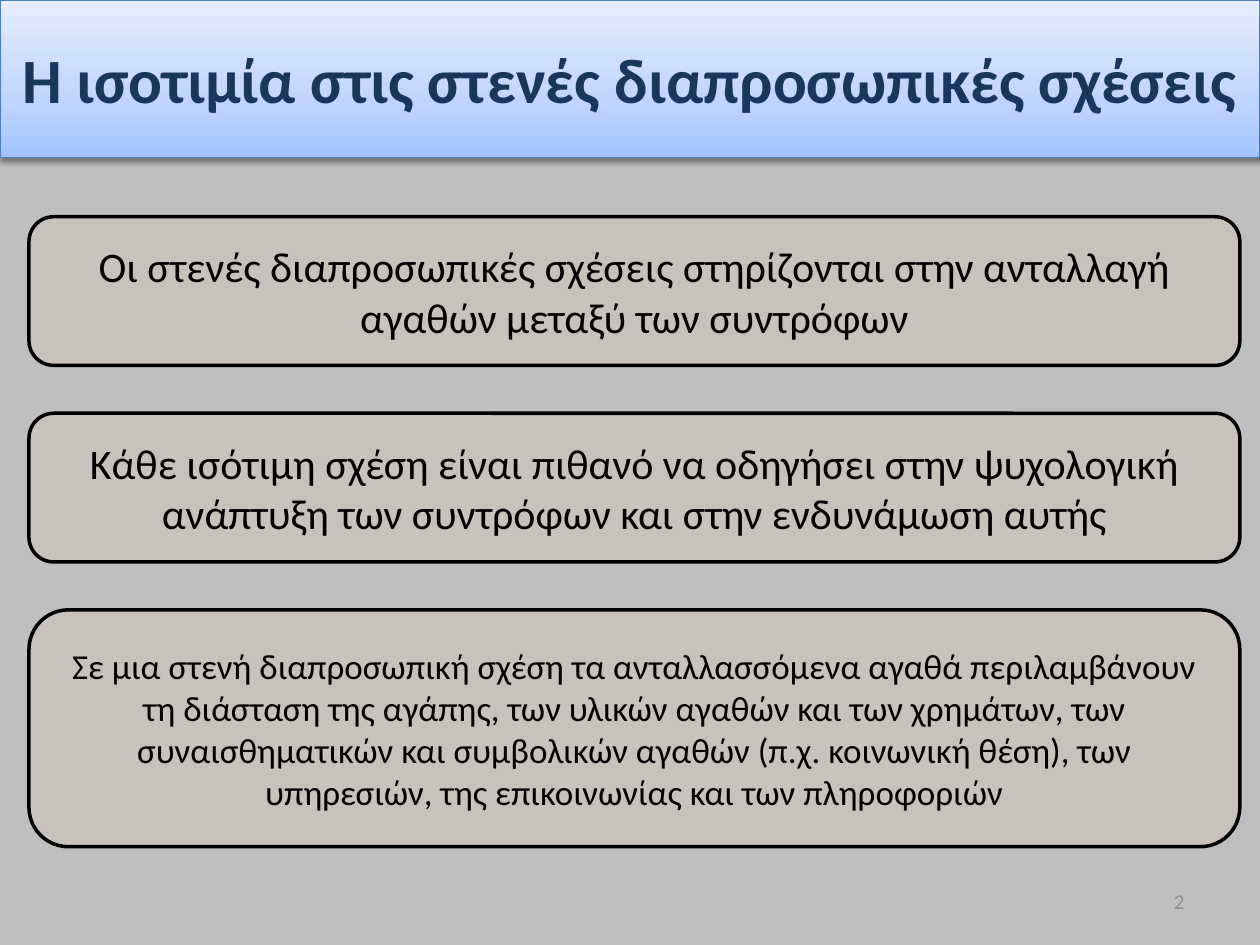
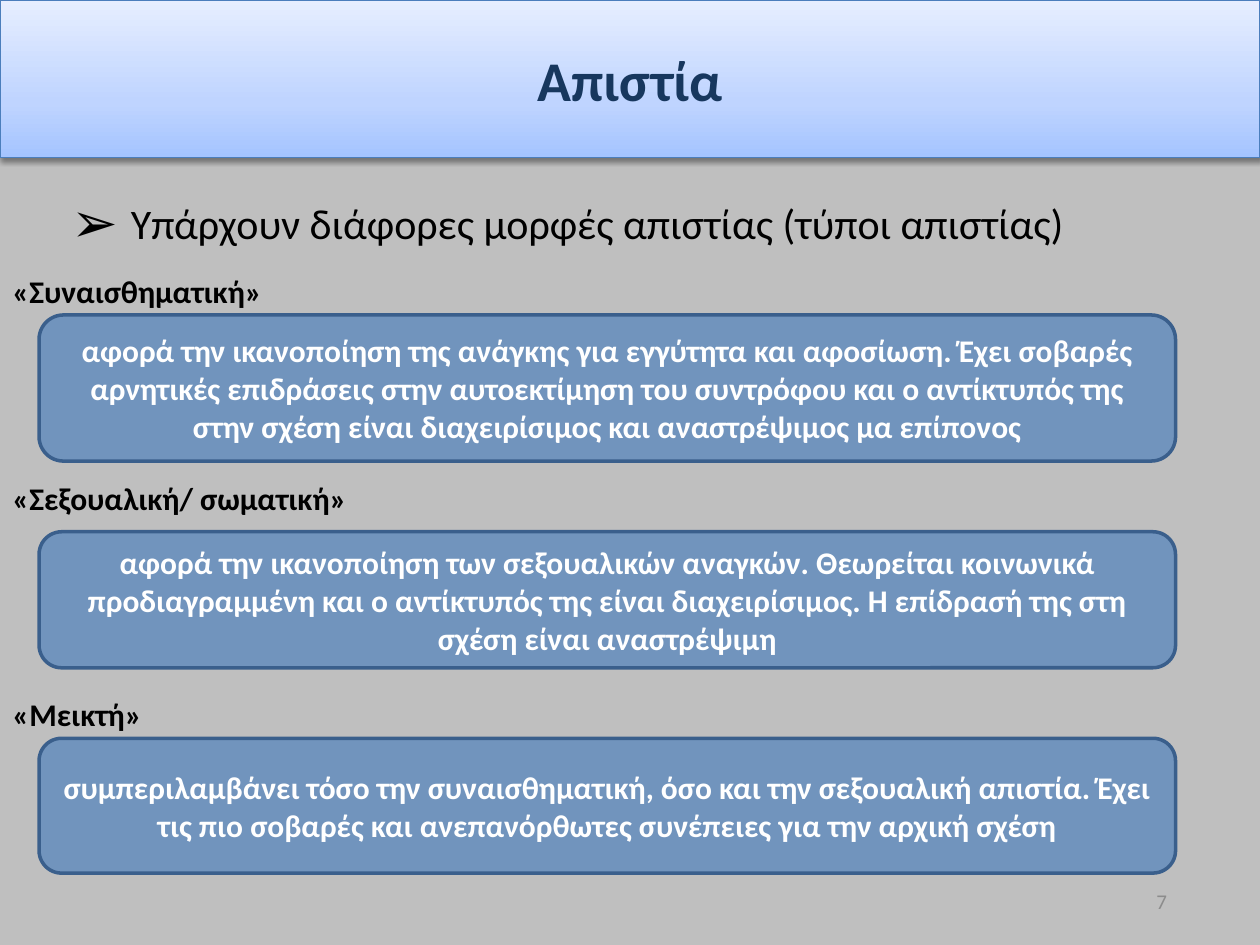
import copy

import pptx
import pptx.dml.color
import pptx.enum.shapes
import pptx.enum.text
import pptx.oxml
import pptx.oxml.ns
import pptx.util
from lxml import etree
from pptx.util import Inches

ALIGN = pptx.enum.text.PP_ALIGN
ANCHOR = pptx.enum.text.MSO_ANCHOR
SHAPES = pptx.enum.shapes.MSO_SHAPE
qn = pptx.oxml.ns.qn


def color(value):
    return pptx.dml.color.RGBColor.from_string(value)


def add_node(parent, tag, **attributes):
    return etree.SubElement(parent, qn(tag), attributes)


class SlideBuilder:
    font = "Calibri"
    background = "BFBFBF"
    title_color = "17375E"
    band_line = "4B7EBC"
    band_stops = [(0, "A4C4FF"), (0.35, "BFD4FF"), (1, "E6EEFF")]
    number_color = "8C8C8C"
    black = "000000"

    def __init__(self):
        self.deck = pptx.Presentation()
        self.deck.slide_width = Inches(10)
        self.deck.slide_height = Inches(7.5)
        self.page = None

    def new_page(self, title, title_size, number, number_left):
        self.page = self.deck.slides.add_slide(self.deck.slide_layouts[6])
        fill = self.page.background.fill
        fill.solid()
        fill.fore_color.rgb = color(self.background)
        self.title_band(title, title_size)
        self.text(number, number_left, 6.95, 2.33, 0.4, 12, self.number_color,
                  align=ALIGN.RIGHT, anchor=ANCHOR.MIDDLE)

    def set_text(self, box, wording, size, ink, bold=False, align=ALIGN.LEFT, anchor=ANCHOR.TOP):
        frame = box.text_frame
        frame.text = wording
        frame.word_wrap = True
        frame.vertical_anchor = anchor
        for para in frame.paragraphs:
            para.alignment = align
            for span in para.runs:
                span.font.name = self.font
                span.font.size = pptx.util.Pt(size)
                span.font.bold = bold
                span.font.color.rgb = color(ink)

    def text(self, wording, left, top, width, height, size, ink, **style):
        box = self.page.shapes.add_textbox(
            Inches(left), Inches(top), Inches(width), Inches(height))
        self.set_text(box, wording, size, ink, **style)
        return box

    def shape(self, kind, left, top, width, height, line, line_width):
        box = self.page.shapes.add_shape(
            kind, Inches(left), Inches(top), Inches(width), Inches(height))
        box.shadow.inherit = False
        box.line.color.rgb = color(line)
        box.line.width = pptx.util.Pt(line_width)
        return box

    def title_band(self, title, size):
        band = self.shape(SHAPES.RECTANGLE, 0, 0, 10, 1.25, self.band_line, 0.75)
        band.fill.gradient()
        band.fill.gradient_angle = 90
        properties = band._element.spPr
        stop_list = properties.find(".//" + qn("a:gsLst"))
        stop_list.append(copy.deepcopy(stop_list[0]))
        for stop, (position, shade) in zip(band.fill.gradient_stops, self.band_stops):
            stop.position = position
            stop.color.rgb = color(shade)
        shadow = add_node(properties.find(qn("a:effectLst")), "a:outerShdw",
                          blurRad=str(pptx.util.Pt(3.1)), dist=str(pptx.util.Pt(1.6)),
                          dir="5400000", rotWithShape="0")
        shade = add_node(shadow, "a:srgbClr", val=self.black)
        add_node(shade, "a:alpha", val="38000")
        self.set_text(band, title, size, self.title_color, bold=True,
                      align=ALIGN.CENTER, anchor=ANCHOR.MIDDLE)

    def card_stack(self, cards, left, top, width, gap, fill, opacity, line, ink, bold=False):
        for wording, height, size in cards:
            card = self.shape(SHAPES.ROUNDED_RECTANGLE, left, top, width, height, line, 2)
            card.fill.solid()
            card.fill.fore_color.rgb = color(fill)
            shade = card._element.spPr.find(qn("a:solidFill") + "/" + qn("a:srgbClr"))
            add_node(shade, "a:alpha", val=str(opacity * 1000))
            self.set_text(card, wording, size, ink, bold=bold,
                          align=ALIGN.CENTER, anchor=ANCHOR.MIDDLE)
            top += height + gap

    def bullet(self, wording, left, top, width, height, size):
        box = self.text(wording, left, top, width, height, size, self.black)
        box.text_frame.margin_top = Inches(0.16)
        properties = box.text_frame.paragraphs[0]._p.get_or_add_pPr()
        properties.set("marL", str(Inches(0.47)))
        properties.set("indent", str(-Inches(0.47)))
        add_node(properties, "a:buSzPct", val="133000")
        add_node(properties, "a:buFont", typeface="Arial")
        add_node(properties, "a:buChar", char="➢")

    def label(self, wording, top, width):
        box = self.text(wording, 0, top, width, 0.4, 18, self.black, bold=True)
        box.text_frame.word_wrap = False
        box.text_frame.auto_size = pptx.enum.text.MSO_AUTO_SIZE.SHAPE_TO_FIT_TEXT


def equity_page(builder):
    builder.new_page("Η ισοτιμία στις στενές διαπροσωπικές σχέσεις", 36, "2", 7.17)
    statements = [
        ("Οι στενές διαπροσωπικές σχέσεις στηρίζονται στην ανταλλαγή αγαθών "
         "μεταξύ των συντρόφων", 1.18, 24),
        ("Κάθε ισότιμη σχέση είναι πιθανό να οδηγήσει στην ψυχολογική ανάπτυξη "
         "των συντρόφων και στην ενδυνάμωση αυτής", 1.18, 24),
        ("Σε μια στενή διαπροσωπική σχέση τα ανταλλασσόμενα αγαθά περιλαμβάνουν "
         "τη διάσταση της αγάπης, των υλικών αγαθών και των χρημάτων, των "
         "συναισθηματικών και συμβολικών αγαθών (π.χ. κοινωνική θέση), των "
         "υπηρεσιών, της επικοινωνίας και των πληροφοριών", 1.88, 20),
    ]
    builder.card_stack(statements, 0.23, 1.72, 9.61, 0.38,
                       "FCD5B5", 16, builder.black, builder.black)


def infidelity_page(builder):
    builder.new_page("Απιστία", 32, "7", 7.03)
    builder.bullet("Υπάρχουν διάφορες μορφές απιστίας (τύποι απιστίας)",
                   0.47, 1.41, 9, 0.88, 24)
    descriptions = [
        ("αφορά την ικανοποίηση της ανάγκης για εγγύτητα και αφοσίωση. Έχει σοβαρές "
         "αρνητικές επιδράσεις στην αυτοεκτίμηση του συντρόφου και ο αντίκτυπός της "
         "στην σχέση είναι διαχειρίσιμος και αναστρέψιμος μα επίπονος", 1.16, 18),
        ("αφορά την ικανοποίηση των σεξουαλικών αναγκών. Θεωρείται κοινωνικά "
         "προδιαγραμμένη και ο αντίκτυπός της είναι διαχειρίσιμος. Η επίδρασή της στη "
         "σχέση είναι αναστρέψιμη", 1.08, 18),
        ("συμπεριλαμβάνει τόσο την συναισθηματική, όσο και την σεξουαλική απιστία. Έχει "
         "τις πιο σοβαρές και ανεπανόρθωτες συνέπειες για την αρχική σχέση", 1.07, 18),
    ]
    builder.card_stack(descriptions, 0.31, 2.5, 9.02, 0.56,
                       "4F81BD", 69, "3A5F8C", "FFFFFF", bold=True)
    for wording, top, width in [
        ("«Συναισθηματική»", 2.11, 2.2),
        ("«Σεξουαλική/ σωματική»", 3.75, 2.86),
        ("«Μεικτή»", 5.47, 1.29),
    ]:
        builder.label(wording, top, width)


def main():
    builder = SlideBuilder()
    equity_page(builder)
    infidelity_page(builder)
    builder.deck.save("out.pptx")


if __name__ == "__main__":
    main()
